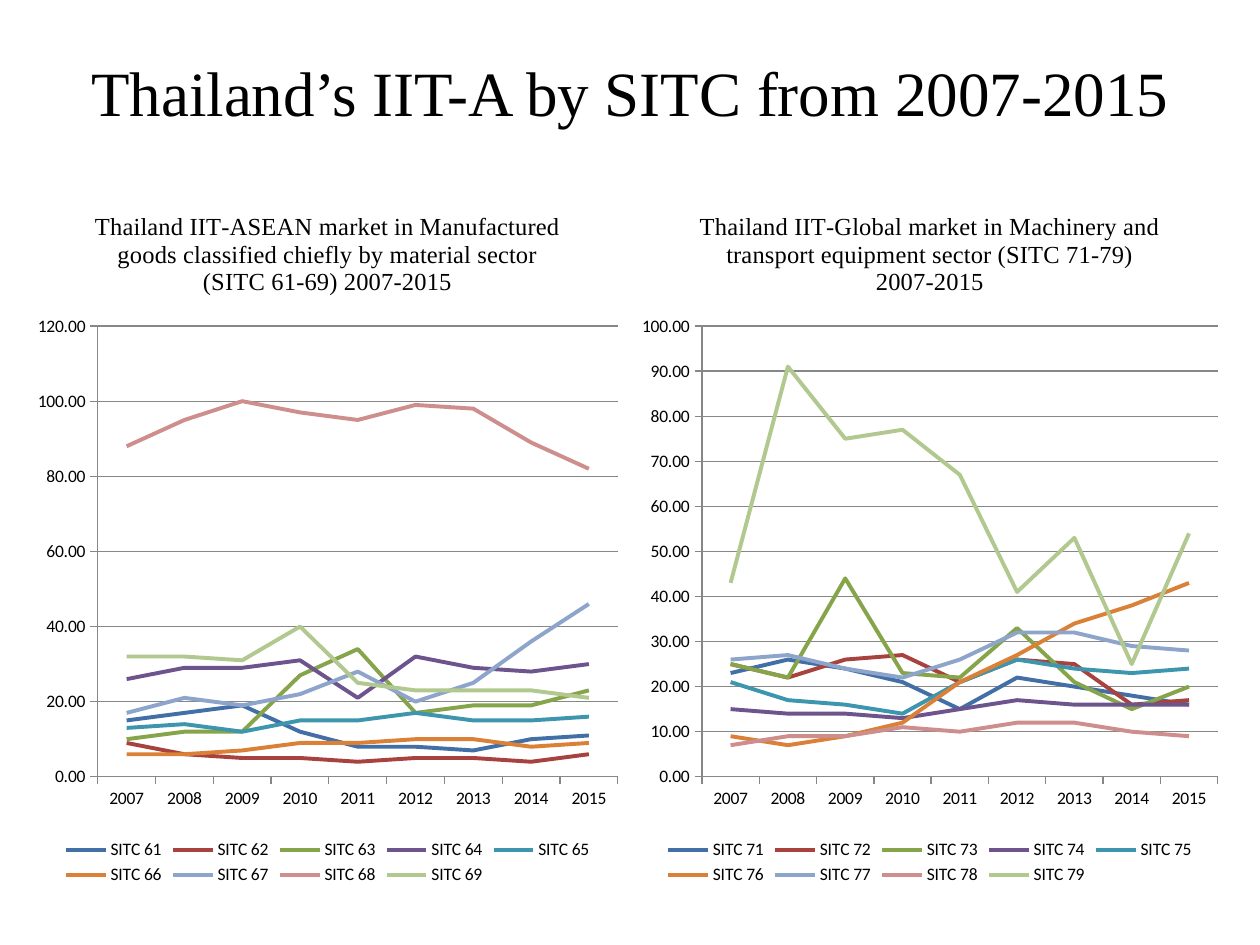
from lxml.etree import SubElement
from pptx import Presentation
from pptx.chart.data import CategoryChartData
from pptx.dml.color import RGBColor
from pptx.enum.chart import XL_CHART_TYPE, XL_LEGEND_POSITION, XL_MARKER_STYLE, XL_TICK_MARK
from pptx.enum.text import MSO_ANCHOR, PP_ALIGN
from pptx.oxml.ns import qn
from pptx.util import Inches, Pt

COLOURS = {"text": "000000", "grid": "878787", "background": "FFFFFF"}
SERIES_COLOURS = ["416FA6", "A8423F", "86A44A", "6E548D", "3D96AE",
                  "DA8137", "8EA5CB", "CE8E8D", "B1C88F"]
PLOT_AREA = {"x": 0.12, "y": 0.2, "w": 0.86, "h": 0.64}
YEARS = [str(year) for year in range(2007, 2016)]

MANUFACTURED_GOODS = [
    [15, 17, 19, 12, 8, 8, 7, 10, 11],
    [9, 6, 5, 5, 4, 5, 5, 4, 6],
    [10, 12, 12, 27, 34, 17, 19, 19, 23],
    [26, 29, 29, 31, 21, 32, 29, 28, 30],
    [13, 14, 12, 15, 15, 17, 15, 15, 16],
    [6, 6, 7, 9, 9, 10, 10, 8, 9],
    [17, 21, 19, 22, 28, 20, 25, 36, 46],
    [88, 95, 100, 97, 95, 99, 98, 89, 82],
    [32, 32, 31, 40, 25, 23, 23, 23, 21],
]
MACHINERY = [
    [23, 26, 24, 21, 15, 22, 20, 18, 16],
    [25, 22, 26, 27, 21, 26, 25, 16, 17],
    [25, 22, 44, 23, 22, 33, 21, 15, 20],
    [15, 14, 14, 13, 15, 17, 16, 16, 16],
    [21, 17, 16, 14, 21, 26, 24, 23, 24],
    [9, 7, 9, 12, 21, 27, 34, 38, 43],
    [26, 27, 24, 22, 26, 32, 32, 29, 28],
    [7, 9, 9, 11, 10, 12, 12, 10, 9],
    [43, 91, 75, 77, 67, 41, 53, 25, 54],
]


def colour(name):
    return RGBColor.from_string(COLOURS[name])


def add_span(para, text, size):
    span = para.add_run()
    span.text = text
    span.font.size = Pt(size)
    span.font.name = "Times New Roman"
    span.font.bold = False
    span.font.color.rgb = colour("text")


def add_title(page, left, top, width, height, text):
    box = page.shapes.add_textbox(left, top, width, height)
    frame = box.text_frame
    frame.word_wrap = True
    frame.vertical_anchor = MSO_ANCHOR.MIDDLE
    para = frame.paragraphs[0]
    para.alignment = PP_ALIGN.CENTER
    add_span(para, text, 36)


def place_plot_area(chart):
    plot_area = chart.element.find(".//" + qn("c:plotArea"))
    layout = plot_area.find(qn("c:layout"))
    if layout is None:
        layout = SubElement(plot_area, qn("c:layout"))
        plot_area.insert(0, layout)
    manual = SubElement(layout, qn("c:manualLayout"))
    SubElement(manual, qn("c:layoutTarget")).set("val", "inner")
    for side in ("x", "y"):
        SubElement(manual, qn(f"c:{side}Mode")).set("val", "edge")
    for name, share in PLOT_AREA.items():
        SubElement(manual, qn(f"c:{name}")).set("val", str(share))


def style_axes(chart, maximum, step):
    value_axis = chart.value_axis
    value_axis.minimum_scale = 0
    value_axis.maximum_scale = maximum
    value_axis.major_unit = step
    value_axis.tick_labels.number_format = "0.00"
    value_axis.tick_labels.number_format_is_linked = False
    value_axis.has_major_gridlines = True
    category_axis = chart.category_axis
    for axis in (value_axis, category_axis):
        axis.major_tick_mark = XL_TICK_MARK.OUTSIDE
    for line in (value_axis.major_gridlines.format.line,
                 value_axis.format.line, category_axis.format.line):
        line.color.rgb = colour("grid")
        line.width = Pt(0.75)


def add_line_chart(page, left, top, width, height, title, first_code, rows, maximum, step):
    chart_data = CategoryChartData(number_format="0.00")
    chart_data.categories = YEARS
    for code, values in enumerate(rows, first_code):
        chart_data.add_series(f"SITC {code}", values)
    chart = page.shapes.add_chart(
        XL_CHART_TYPE.LINE, left, top, width, height, chart_data).chart
    chart.font.name = "Calibri"
    chart.font.size = Pt(10)
    chart.font.color.rgb = colour("text")
    chart.has_title = True
    add_span(chart.chart_title.text_frame.paragraphs[0], title, 14)
    chart.chart_title.include_in_layout = False
    chart.has_legend = True
    chart.legend.position = XL_LEGEND_POSITION.BOTTOM
    chart.legend.include_in_layout = False
    chart.plots[0].vary_by_categories = False
    for series, shade in zip(chart.plots[0].series, SERIES_COLOURS):
        series.smooth = False
        series.marker.style = XL_MARKER_STYLE.NONE
        series.format.line.color.rgb = RGBColor.from_string(shade)
        series.format.line.width = Pt(2.25)
    style_axes(chart, maximum, step)
    place_plot_area(chart)


def main():
    deck = Presentation()
    deck.slide_width = Inches(10)
    deck.slide_height = Inches(7.5)
    page = deck.slides.add_slide(deck.slide_layouts[6])
    page.background.fill.solid()
    page.background.fill.fore_color.rgb = colour("background")
    add_title(page, Inches(0.5), Inches(0.3), Inches(9), Inches(0.85),
              "Thailand’s IIT-A by SITC from 2007-2015")
    add_line_chart(page, Inches(0.2), Inches(1.47), Inches(4.8), Inches(5.59),
                   "Thailand IIT-ASEAN market in Manufactured goods classified "
                   "chiefly by material sector (SITC 61-69) 2007-2015",
                   61, MANUFACTURED_GOODS, 120, 20)
    add_line_chart(page, Inches(5), Inches(1.47), Inches(4.76), Inches(5.59),
                   "Thailand IIT-Global market in Machinery and transport "
                   "equipment sector (SITC 71-79) 2007-2015",
                   71, MACHINERY, 100, 10)
    deck.save("out.pptx")


if __name__ == "__main__":
    main()
